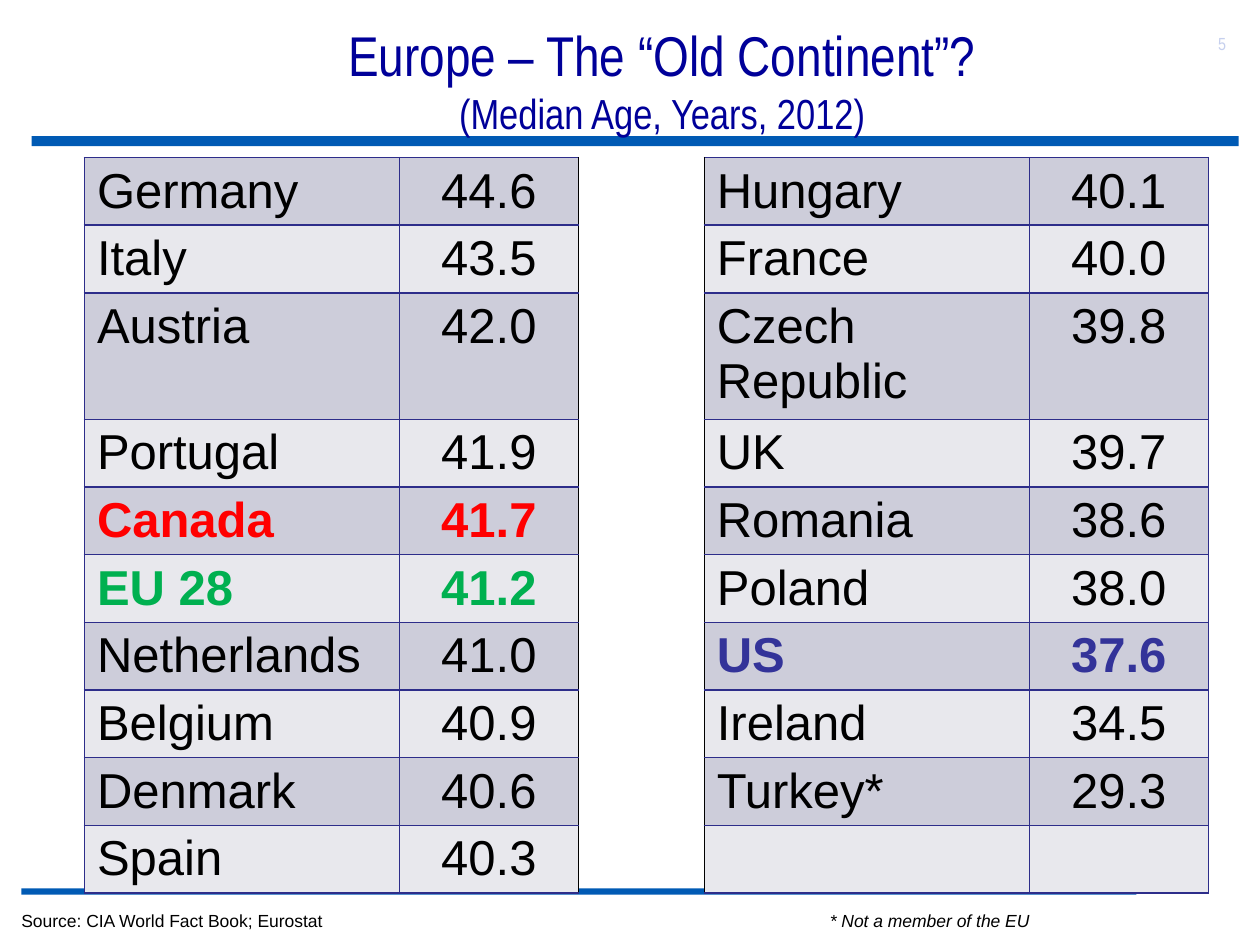
from lxml import etree
from pptx import Presentation
from pptx import util as u
from pptx.dml import color
from pptx.enum import shapes, text
from pptx.oxml import ns

COLORS = {
    "bar": "005AB4", "title": "000099", "number": "C6D0EE",
    "border": "2D2D8A", "black": "000000", "odd": "CDCDDA", "even": "E8E8ED",
    "Canada": "FF0000", "EU 28": "00B050", "US": "333399",
}
COLUMN_WIDTHS = [2.5, 1.42, 1, 2.58, 1.42]
ROW_HEIGHT = 0.53
TALL_ROW_HEIGHT = 0.97
LEFT_ROWS = [
    ("Germany", "44.6"), ("Italy", "43.5"), ("Austria", "42.0"),
    ("Portugal", "41.9"), ("Canada", "41.7"), ("EU 28", "41.2"),
    ("Netherlands", "41.0"), ("Belgium", "40.9"), ("Denmark", "40.6"),
    ("Spain", "40.3"),
]
RIGHT_ROWS = [
    ("Hungary", "40.1"), ("France", "40.0"), ("Czech Republic", "39.8"),
    ("UK", "39.7"), ("Romania", "38.6"), ("Poland", "38.0"),
    ("US", "37.6"), ("Ireland", "34.5"), ("Turkey*", "29.3"), ("", ""),
]
BORDERS = [
    ("border", "border", "border", "border"),
    ("border", "black", "border", "border"),
    ("black", "black", None, None),
    ("black", "border", "border", "border"),
    ("border", "border", "border", "border"),
]


def add_run(paragraph, words, color_name, **formats):
    run = paragraph.add_run()
    run.text = words
    run.font.color.rgb = color.RGBColor.from_string(COLORS[color_name])
    for name, value in formats.items():
        setattr(run.font, name, value)


def add_text_box(place, **formats):
    frame = slide.shapes.add_textbox(*map(u.Inches, place)).text_frame
    frame.word_wrap = True
    for name, value in formats.items():
        setattr(frame, name, value)
    return frame.paragraphs[0]


presentation = Presentation()
presentation.slide_width = u.Inches(10)
presentation.slide_height = u.Inches(7.5)
slide = presentation.slides.add_slide(presentation.slide_layouts[6])

for place in [(0.25, 1.08, 9.58, 0.08), (0.17, 7.05, 8.85, 0.05)]:
    bar = slide.shapes.add_shape(shapes.MSO_SHAPE.RECTANGLE, *map(u.Inches, place))
    bar.shadow.inherit = False
    bar.fill.solid()
    bar.fill.fore_color.rgb = color.RGBColor.from_string(COLORS["bar"])
    bar.line.fill.background()

title = add_text_box((0.67, 0.17, 9.17, 0.92), vertical_anchor=text.MSO_ANCHOR.MIDDLE)
title.alignment = text.PP_ALIGN.CENTER
add_run(title, "Europe – The “Old Continent”?", "title", size=u.Pt(32), name="Arial Narrow")
title.add_line_break()
add_run(title, "(Median Age, Years, 2012)", "title", size=u.Pt(24), name="Arial Narrow")

row_heights = [TALL_ROW_HEIGHT if country == "Czech Republic" else ROW_HEIGHT
               for country, age in RIGHT_ROWS]
table_frame = slide.shapes.add_table(
    len(LEFT_ROWS), len(COLUMN_WIDTHS), u.Inches(0.67), u.Inches(1.25),
    u.Inches(sum(COLUMN_WIDTHS)), u.Inches(sum(row_heights)))
table = table_frame.table
table.first_row = False
table.horz_banding = False
for column, width in zip(table.columns, COLUMN_WIDTHS):
    column.width = u.Inches(width)
for row, height in zip(table.rows, row_heights):
    row.height = u.Inches(height)

for row_index, (left, right) in enumerate(zip(LEFT_ROWS, RIGHT_ROWS)):
    band = "even" if row_index % 2 else "odd"
    countries = [left[0], left[0], "", right[0], right[0]]
    for column_index, words in enumerate([*left, "", *right]):
        cell = table.cell(row_index, column_index)
        cell.margin_bottom = u.Inches(0.02)
        if column_index == 2:
            cell.fill.background()
        else:
            cell.fill.solid()
            cell.fill.fore_color.rgb = color.RGBColor.from_string(COLORS[band])
        paragraph = cell.text_frame.paragraphs[0]
        if column_index in (1, 4):
            paragraph.alignment = text.PP_ALIGN.CENTER
        if words:
            country = countries[column_index]
            highlighted = country in COLORS
            add_run(paragraph, words, country if highlighted else "black",
                    size=u.Pt(28), name="Arial", bold=highlighted)
        properties = cell._tc.get_or_add_tcPr()
        for position, (side, name) in enumerate(zip("LRTB", BORDERS[column_index])):
            line = etree.Element(ns.qn(f"a:ln{side}"), w=str(u.Pt(1)))
            if name:
                fill = etree.SubElement(line, ns.qn("a:solidFill"))
                etree.SubElement(fill, ns.qn("a:srgbClr"), val=COLORS[name])
            else:
                etree.SubElement(line, ns.qn("a:noFill"))
            properties.insert(position, line)

footer = add_text_box((0.17, 7.17, 8.5, 0.27), margin_left=0, margin_right=0)
tabs = etree.SubElement(footer._p.get_or_add_pPr(), ns.qn("a:tabLst"))
etree.SubElement(tabs, ns.qn("a:tab"), pos=str(u.Inches(8)), algn="r")
add_run(footer, "Source: CIA World Fact Book; Eurostat\t", "black", size=u.Pt(10), name="Arial")
add_run(footer, "* Not a member of the EU", "black", size=u.Pt(10), name="Arial", italic=True)

number = add_text_box((9.57, 0.21, 0.43, 0.5))
add_run(number, "5", "number", size=u.Pt(10), name="Arial Narrow")

presentation.save("out.pptx")
